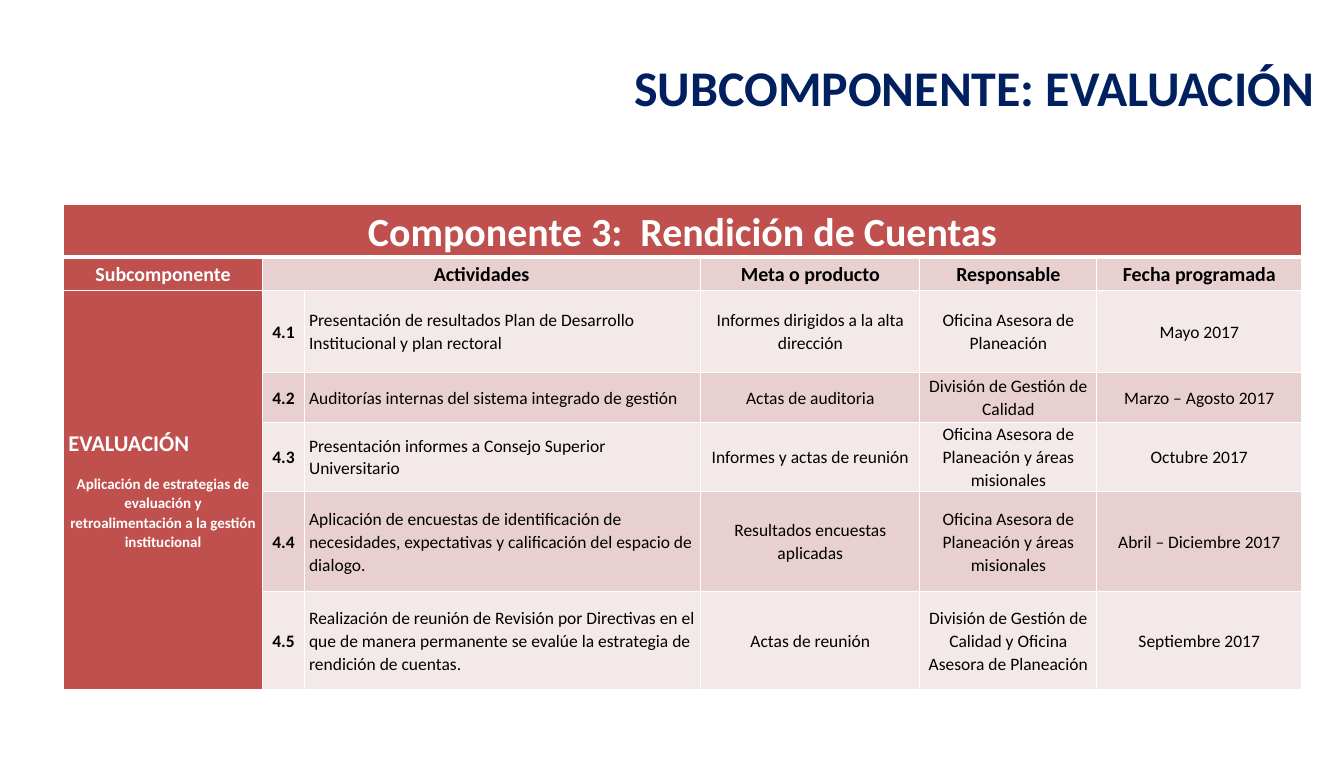
"""Build the slide with the evaluation activities table."""
import lxml.etree
import pptx
import pptx.dml.color
import pptx.enum.text
import pptx.oxml.ns
import pptx.util

COLORS = {"navy": "002060", "red": "C0504D", "pink": "E8D0D0",
          "pale": "F4E9E9", "white": "FFFFFF", "black": "000000"}
ALIGN = pptx.enum.text.PP_ALIGN
WIDTH, HEIGHT = 14.96, 8.66
COLS = [2.21, 0.47, 4.41, 2.44, 1.97, 2.28]
ROWS = [0.57, 0.37, 0.92, 0.55, 0.77, 1.12, 1.09]
TABLE_TITLE = "Componente 3:  Rendición de Cuentas"
HEADERS = ["Subcomponente", "Actividades", "", "Meta o producto",
           "Responsable", "Fecha programada"]
GOAL = ("Aplicación de estrategias de evaluación y retroalimentación "
        "a la gestión institucional")
ACTIVITIES = [
    ("Presentación de resultados Plan de Desarrollo Institucional y plan rectoral",
     "Informes dirigidos a la alta dirección",
     "Oficina Asesora de Planeación", "Mayo 2017"),
    ("Auditorías internas del sistema integrado de gestión",
     "Actas de auditoria", "División de Gestión de Calidad",
     "Marzo – Agosto 2017"),
    ("Presentación informes a Consejo Superior Universitario",
     "Informes y actas de reunión",
     "Oficina Asesora de Planeación y áreas misionales", "Octubre 2017"),
    ("Aplicación de encuestas de identificación de necesidades, "
     "expectativas y calificación del espacio de dialogo.",
     "Resultados encuestas aplicadas",
     "Oficina Asesora de Planeación y áreas misionales",
     "Abril – Diciembre 2017"),
    ("Realización de reunión de Revisión por Directivas en el que de manera "
     "permanente se evalúe la estrategia de rendición de cuentas.",
     "Actas de reunión",
     "División de Gestión de Calidad y Oficina Asesora de Planeación",
     "Septiembre 2017"),
]


def rgb(name):
    """Return a palette colour."""
    return pptx.dml.color.RGBColor.from_string(COLORS[name])


def share_x(part):
    """Return a share of the slide's width."""
    return pptx.util.Inches(WIDTH * part)


def share_y(part):
    """Return a share of the slide's height."""
    return pptx.util.Inches(HEIGHT * part)


def write(p, text, size=14, color="black", bold=False, align=ALIGN.CENTER,
          spacing=1.07, after=0):
    """Put formatted text in a paragraph."""
    p.alignment = align
    p.line_spacing = spacing
    p.space_before = pptx.util.Pt(0)
    p.space_after = pptx.util.Pt(after)
    r = p.add_run()
    r.text = text
    r.font.name = "Calibri"
    r.font.size = pptx.util.Pt(size)
    r.font.bold = bold
    r.font.color.rgb = rgb(color)


def set_margins(box, left, right):
    """Set the inner margins in inches, with none above and below."""
    box.margin_left = pptx.util.Inches(left)
    box.margin_right = pptx.util.Inches(right)
    box.margin_top = box.margin_bottom = 0


def add_borders(cell, top, bottom):
    """Draw white cell borders with the given top and bottom widths."""
    qn = pptx.oxml.ns.qn
    tc_pr = cell._tc.get_or_add_tcPr()
    for side, width in (("L", 1), ("R", 1), ("T", top), ("B", bottom)):
        ln = lxml.etree.SubElement(tc_pr, qn(f"a:ln{side}"),
                                   w=str(pptx.util.Pt(width)))
        fill = lxml.etree.SubElement(ln, qn("a:solidFill"))
        lxml.etree.SubElement(fill, qn("a:srgbClr"), val=COLORS["white"])


def fill_color(row, col):
    """Return the colour name of a cell's fill."""
    if row == 0 or col == 0:
        return "red"
    return "pink" if row % 2 else "pale"


def style_cell(cell, row, col):
    """Set a cell's margins, anchor, borders and fill."""
    set_margins(cell, 0.05, 0.05)
    cell.vertical_anchor = pptx.enum.text.MSO_ANCHOR.MIDDLE
    add_borders(cell, 3 if row == 1 else 1, 3 if row == 0 else 1)
    cell.fill.solid()
    cell.fill.fore_color.rgb = rgb(fill_color(row, col))


def add_title(s):
    """Format the title placeholder."""
    title = s.shapes.title
    title.left, title.top = share_x(0.284), share_y(0.073)
    title.width, title.height = share_x(0.716), share_y(0.077)
    tf = title.text_frame
    tf.word_wrap = True
    tf.auto_size = pptx.enum.text.MSO_AUTO_SIZE.NONE
    tf.vertical_anchor = pptx.enum.text.MSO_ANCHOR.MIDDLE
    set_margins(tf, 0.2, 0.33)
    write(tf.paragraphs[0], "SUBCOMPONENTE: EVALUACIÓN", size=40,
          color="navy", bold=True, align=ALIGN.RIGHT, spacing=1)


def add_grid(s):
    """Add the styled table with its merged cells and return it."""
    frame = s.shapes.add_table(
        len(ROWS), len(COLS), share_x(0.0475), share_y(0.263),
        pptx.util.Inches(sum(COLS)), pptx.util.Inches(sum(ROWS)))
    table = frame.table
    table.horz_banding = False
    for column, width in zip(table.columns, COLS):
        column.width = pptx.util.Inches(width)
    for line, height in zip(table.rows, ROWS):
        line.height = pptx.util.Inches(height)
    for row in range(len(ROWS)):
        for col in range(len(COLS)):
            style_cell(table.cell(row, col), row, col)
    for first, last in (((0, 0), (0, 5)), ((1, 1), (1, 2)), ((2, 0), (6, 0))):
        table.cell(*first).merge(table.cell(*last))
    return table


def fill_table(table):
    """Write the headings, the goal and the activities."""
    def paragraph(row, col):
        """Return the first paragraph of a cell."""
        return table.cell(row, col).text_frame.paragraphs[0]

    write(paragraph(0, 0), TABLE_TITLE, size=32, color="white", bold=True)
    for col, text in enumerate(HEADERS):
        if text:
            write(paragraph(1, col), text, size=16, bold=True,
                  color="black" if col else "white")
    write(paragraph(2, 0), "EVALUACIÓN", size=18, color="white", bold=True,
          align=ALIGN.LEFT, after=13)
    write(table.cell(2, 0).text_frame.add_paragraph(), GOAL, size=12,
          color="white", bold=True)
    for number, activity in enumerate(ACTIVITIES, 1):
        write(paragraph(number + 1, 1), f"4.{number}", bold=True)
        for col, text in enumerate(activity, 2):
            write(paragraph(number + 1, col), text,
                  align=ALIGN.LEFT if col == 2 else ALIGN.CENTER)


def main():
    """Create and save the presentation."""
    prs = pptx.Presentation()
    prs.slide_width = share_x(1)
    prs.slide_height = share_y(1)
    s = prs.slides.add_slide(prs.slide_layouts[5])
    add_title(s)
    fill_table(add_grid(s))
    prs.save("out.pptx")


if __name__ == "__main__":
    main()
